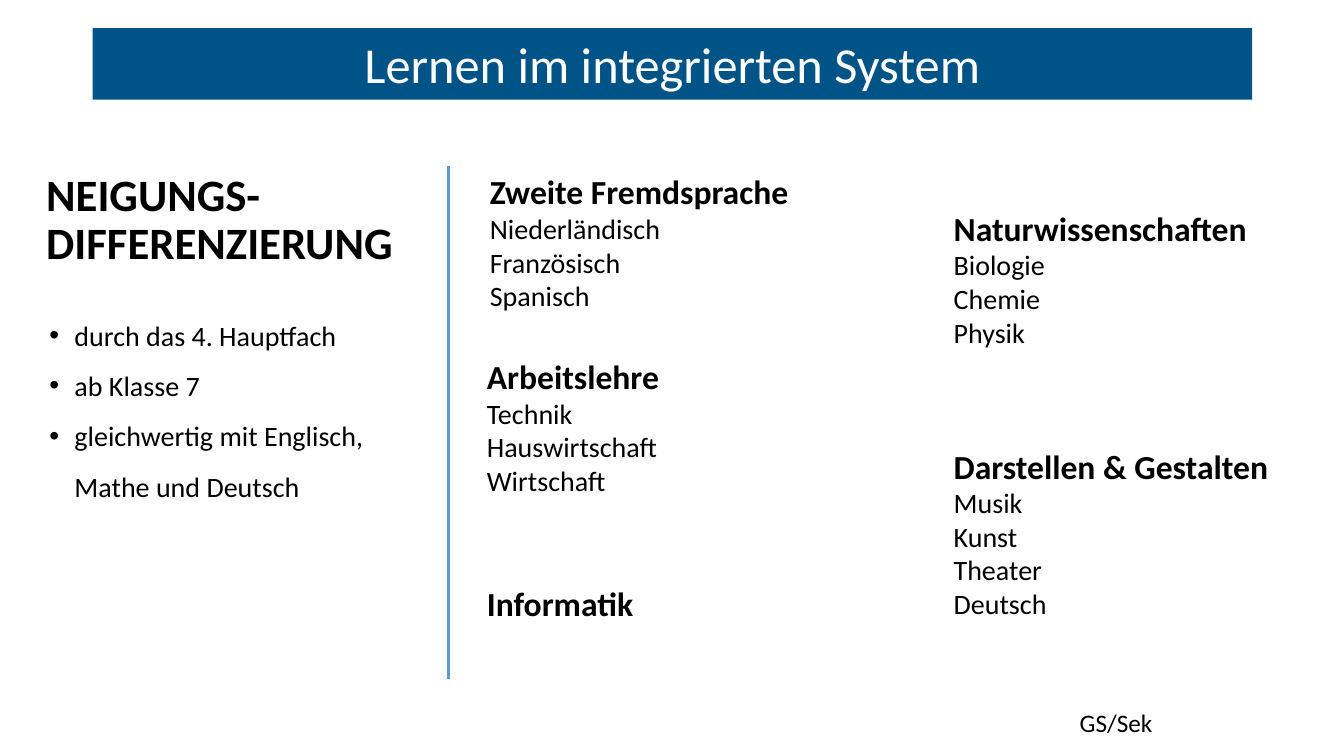
from lxml.etree import SubElement
from pptx import Presentation
from pptx.dml.color import RGBColor
from pptx.enum.shapes import MSO_CONNECTOR, MSO_SHAPE
from pptx.enum.text import MSO_ANCHOR, MSO_AUTO_SIZE, PP_ALIGN
from pptx.oxml.ns import qn
from pptx.util import Inches, Pt

# Content
TITLE = "Lernen im integrierten System"
HEADING = ["NEIGUNGS-", "DIFFERENZIERUNG"]
POINTS = [
    "durch das 4. Hauptfach",
    "ab Klasse 7",
    "gleichwertig mit Englisch, Mathe und Deutsch",
]
FOOTER = "GS/Sek"
# Subject, its branches, box (left, top, width, height)
SUBJECTS = [
    ("Zweite Fremdsprache", ["Niederländisch", "Französisch", "Spanisch"],
     (4.76, 1.65, 3.55, 1.54)),
    ("Arbeitslehre", ["Technik", "Hauswirtschaft", "Wirtschaft"],
     (4.73, 3.48, 3.58, 2.46)),
    ("Informatik", [], (4.73, 5.73, 3.58, 1.12)),
    ("Naturwissenschaften", ["Biologie", "Chemie", "Physik"],
     (9.36, 2.01, 3.58, 1.87)),
    ("Darstellen & Gestalten", ["Musik", "Kunst", "Theater", "Deutsch"],
     (9.36, 4.37, 3.81, 2.96)),
]

# Formats
BLACK, WHITE, BANNER_BLUE, LINE_BLUE = "000000", "FFFFFF", "005386", "5B9BD5"
TITLE_FONT = {"size": Pt(36), "bold": False}
HEADING_FONT = {"size": Pt(32), "bold": True}
SUBJECT_FONT = {"size": Pt(24), "bold": True}
BODY_FONT = {"size": Pt(20), "bold": False}
FOOTER_FONT = {"size": Pt(18), "bold": False}


def color(hex_value):
    return RGBColor.from_string(hex_value)


def add_bullet(paragraph):
    properties = paragraph._p.get_or_add_pPr()
    properties.set("marL", str(Inches(0.25)))
    properties.set("indent", str(-Inches(0.25)))
    SubElement(properties, qn("a:buFont")).set("typeface", "Arial")
    SubElement(properties, qn("a:buChar")).set("char", "•")


def write(frame, lines, text_color=BLACK, bullets=False, **paragraph_format):
    """Fill a text frame with (text, font format) lines."""
    frame.word_wrap = True
    for index, (text, font_format) in enumerate(lines):
        paragraph = frame.add_paragraph() if index else frame.paragraphs[0]
        if bullets:
            add_bullet(paragraph)
        for name, value in paragraph_format.items():
            setattr(paragraph, name, value)
        run = paragraph.add_run()
        run.text = text
        for name, value in {"name": "Calibri", **font_format}.items():
            setattr(run.font, name, value)
        run.font.color.rgb = color(text_color)


def add_text(slide, box, lines, **options):
    shape = slide.shapes.add_textbox(*map(Inches, box))
    write(shape.text_frame, lines, **options)
    return shape


def add_banner(slide):
    banner = slide.shapes.add_shape(
        MSO_SHAPE.RECTANGLE, *map(Inches, (0.92, 0.28, 11.5, 0.71)))
    banner.shadow.inherit = False
    banner.fill.solid()
    banner.fill.fore_color.rgb = color(BANNER_BLUE)
    banner.line.fill.background()
    banner.text_frame.vertical_anchor = MSO_ANCHOR.BOTTOM
    write(banner.text_frame, [(TITLE, TITLE_FONT)], WHITE,
          alignment=PP_ALIGN.CENTER, line_spacing=0.9)


def add_divider(slide):
    divider = slide.shapes.add_connector(
        MSO_CONNECTOR.STRAIGHT, *map(Inches, (4.45, 1.65, 4.45, 6.74)))
    divider.line.color.rgb = color(LINE_BLUE)
    divider.line.width = Pt(2.25)
    SubElement(divider._element.spPr, qn("a:effectLst"))


def main():
    presentation = Presentation()
    presentation.slide_width = Inches(13.33)
    presentation.slide_height = Inches(7.5)
    slide = presentation.slides.add_slide(presentation.slide_layouts[6])

    # Title and left column
    add_banner(slide)
    add_text(slide, (0.36, 1.66, 4.11, 0.75),
             [(line, HEADING_FONT) for line in HEADING], line_spacing=0.9)
    add_text(slide, (0.39, 2.94, 3.72, 3.04),
             [(point, BODY_FONT) for point in POINTS],
             bullets=True, line_spacing=1.5)
    add_divider(slide)

    # Subjects
    for subject, branches, box in SUBJECTS:
        add_text(slide, box, [(subject, SUBJECT_FONT)]
                 + [(branch, BODY_FONT) for branch in branches])

    # Footer
    footer = add_text(slide, (10.61, 6.97, 1.05, 0.4), [(FOOTER, FOOTER_FONT)])
    footer.text_frame.auto_size = MSO_AUTO_SIZE.SHAPE_TO_FIT_TEXT

    presentation.save("out.pptx")


if __name__ == "__main__":
    main()
